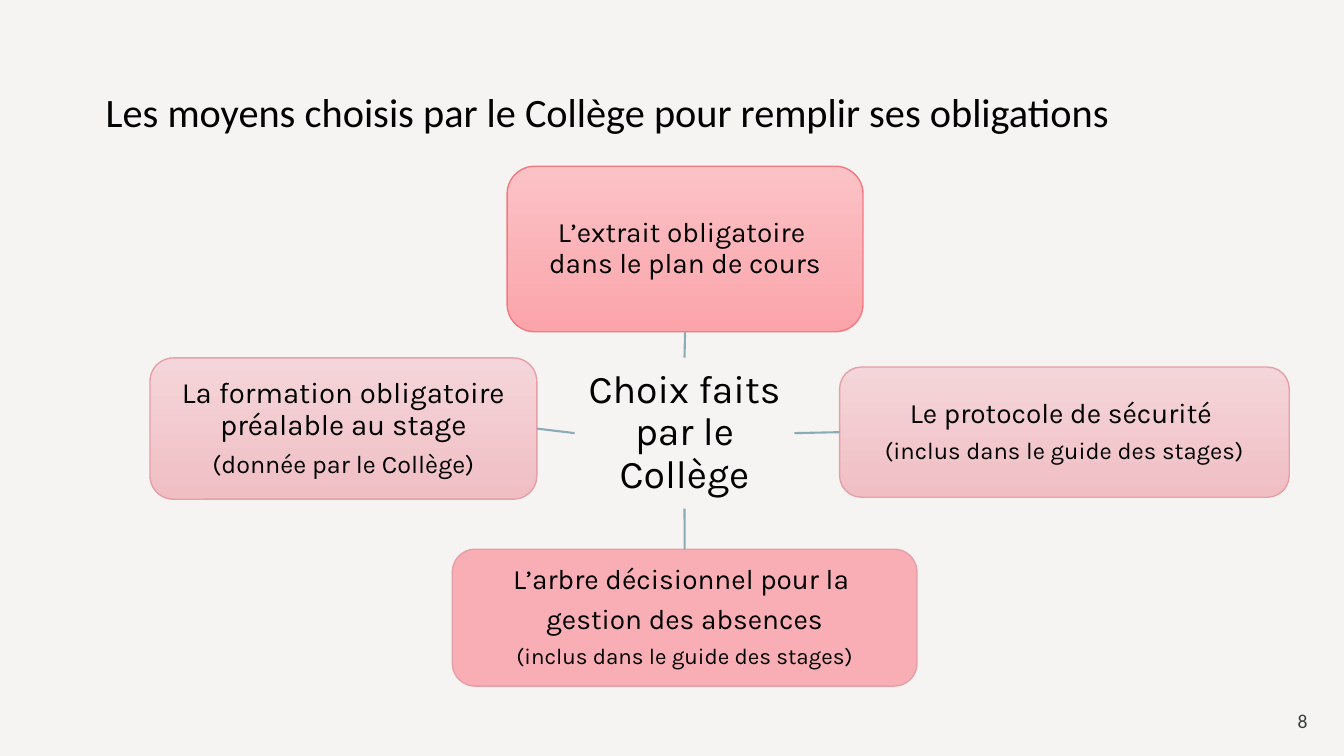
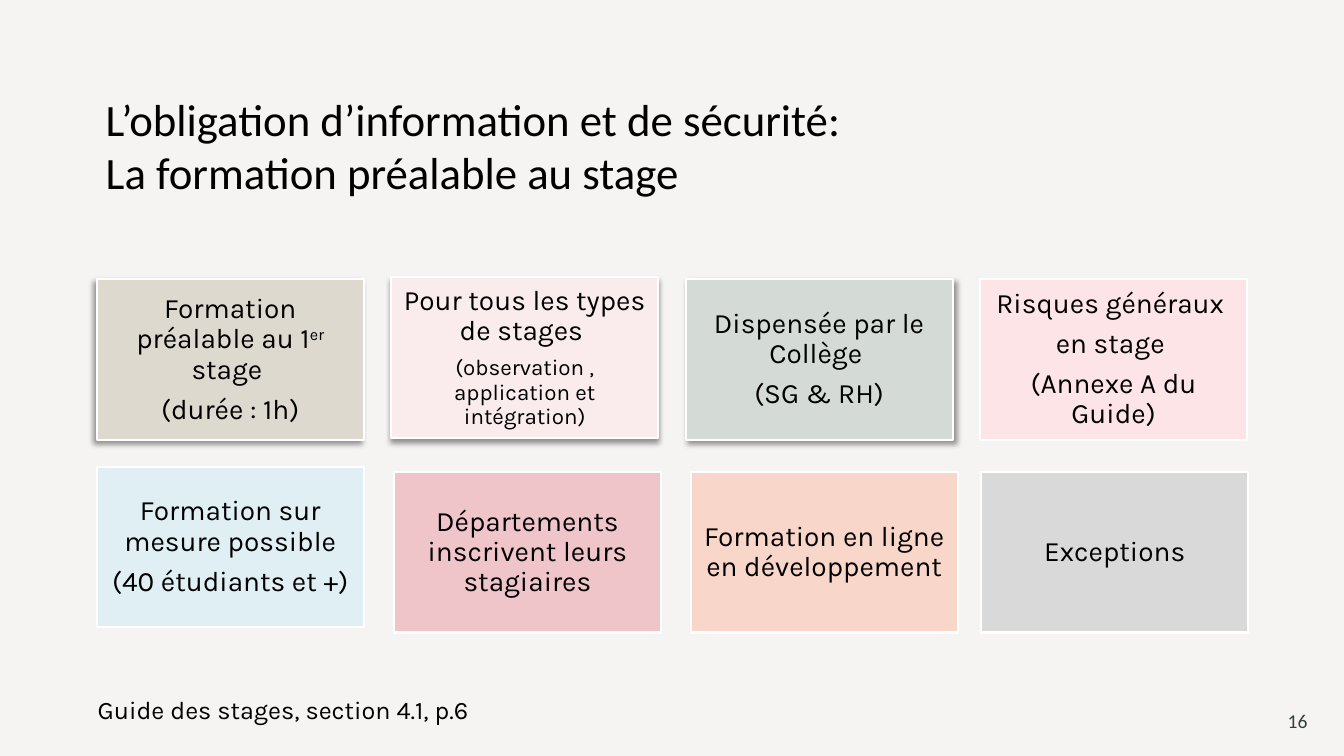
from lxml import etree
from pptx import Presentation
from pptx.dml.color import RGBColor
from pptx.enum import shapes, text
from pptx.oxml import ns
from pptx.util import Cm, Pt

# Shared style
BACKDROP = RGBColor(0xF6, 0xF4, 0xF2)
BLACK = RGBColor(0, 0, 0)
WHITE = RGBColor(0xFF, 0xFF, 0xFF)
NUMBER_GREEN = RGBColor(0x35, 0x40, 0x3A)
LINK_BLUE = RGBColor(0x8B, 0xAC, 0xB7)
CORAL = RGBColor(0xF4, 0x78, 0x82)
ROSE = RGBColor(0xE5, 0x9F, 0xA7)
PINK = RGBColor(0xF8, 0xAE, 0xB4)
BRIGHT_FADE = (RGBColor(0xFB, 0xC2, 0xC6), RGBColor(0xFB, 0xA5, 0xAB))
SOFT_FADE = (RGBColor(0xF4, 0xD5, 0xD9), RGBColor(0xF0, 0xBF, 0xC4))
SAND = RGBColor(0xDD, 0xD9, 0xCF)
BLUSH = RGBColor(0xFA, 0xEC, 0xED)
SAGE = RGBColor(0xD4, 0xDB, 0xD7)
PALE_PINK = RGBColor(0xFD, 0xE4, 0xE6)
SKY = RGBColor(0xDF, 0xEF, 0xF4)
DUSTY_PINK = RGBColor(0xEF, 0xC5, 0xCA)
PEACH = RGBColor(0xF8, 0xD6, 0xC9)
GREY = RGBColor(0xD9, 0xD9, 0xD9)
TITLE_FONT, BODY_FONT = "Calibri", "Karla"
ROUND = shapes.MSO_SHAPE.ROUNDED_RECTANGLE
ALTERNATE = shapes.MSO_SHAPE.FLOWCHART_ALTERNATE_PROCESS
LEFT, CENTER, RIGHT = text.PP_ALIGN.LEFT, text.PP_ALIGN.CENTER, text.PP_ALIGN.RIGHT
MIDDLE, BOTTOM = text.MSO_ANCHOR.MIDDLE, text.MSO_ANCHOR.BOTTOM
SPACING = 0.35  # space after a paragraph, as a share of its text size

# Content: lengths in cm; a paragraph is (text, size), and in a tuple of
# runs every second run is raised
MEANS_TITLE = ["Les moyens choisis par le Collège pour remplir ses obligations"]
CHOICE = [("Choix faits par le Collège", 28)]
CHOICE_BOX = (14.66, 9.19, 5.18, 3.45)
LINK_GAP = 0.18
# preset, box, fill, outline, spacing, link site, (x, y) side of the centre, paragraphs
MEANS = [
    (ALTERNATE, (12.78, 4.19, 8.97, 4.17), BRIGHT_FADE, CORAL, 0, 2, (0, -1),
     [("L’extrait obligatoire ", 20), ("dans le plan de cours", 20)]),
    (ALTERNATE, (21.16, 9.25, 11.33, 3.28), SOFT_FADE, ROSE, SPACING, 1, (1, 0),
     [("Le protocole de sécurité ", 20), ("(inclus dans le guide des stages)", 17)]),
    (ROUND, (11.4, 13.84, 11.71, 3.45), PINK, ROSE, SPACING, 0, (0, 1),
     [("L’arbre décisionnel pour la ", 20), ("gestion des absences", 20),
      ("(inclus dans le guide des stages)", 16)]),
    (ROUND, (3.78, 9.02, 9.75, 3.56), SOFT_FADE, ROSE, SPACING, 3, (-1, 0),
     [("La formation obligatoire préalable au stage", 21),
      ("(donnée par le Collège)", 18)]),
]

TRAINING_TITLE = ["L’obligation d’information et de sécurité:",
                  "La formation préalable au stage"]
# fill, shadow angle, (x, y) shift from the grid, paragraphs
CARDS = [
    (SAND, 135, (0, 0), [(("Formation préalable au 1", "er", " stage "), 20),
                         ("(durée : 1h)", 20)]),
    (BLUSH, 90, (0, -0.05), [("Pour tous les types de stages ", 20),
                             ("(observation , application et intégration)", 16)]),
    (SAGE, 45, (0, 0), [("Dispensée par le Collège ", 20), ("(SG & RH)", 20)]),
    (PALE_PINK, None, (0, 0), [("Risques généraux ", 20), ("en stage ", 20),
                               ("(Annexe A du Guide)", 20)]),
    (SKY, None, (0, -0.13), [("Formation sur mesure possible", 20),
                             ("(40 étudiants et +)", 20)]),
    (DUSTY_PINK, None, (0.07, 0), [("Départements inscrivent leurs stagiaires", 20)]),
    (PEACH, None, (0.13, 0), [("Formation en ligne en développement", 20)]),
    (GREY, None, (0.03, 0), [("Exceptions", 20)]),
]
COLUMNS = 4
CARD_W, CARD_H = 6.73, 4.05
GRID_X, GRID_Y, STEP_X, STEP_Y = 2.44, 7.04, 7.42, 4.85
REFERENCE = [("Guide des stages, section 4.1, p.6", 18)]


def cm(*lengths):
    return [Cm(length) for length in lengths]


def add_run(paragraph, words, size, font=BODY_FONT, colour=BLACK):
    run = paragraph.add_run()
    run.text = words
    run.font.size, run.font.name = Pt(size), font
    run.font.color.rgb = colour
    return run


def write(shape, paragraphs, margin, spacing=SPACING, align=CENTER):
    frame = shape.text_frame
    frame.word_wrap = True
    frame.vertical_anchor = MIDDLE
    frame.margin_left = frame.margin_right = Cm(margin)
    frame.margin_top = frame.margin_bottom = Cm(margin)
    for i, (words, size) in enumerate(paragraphs):
        paragraph = frame.add_paragraph() if i else frame.paragraphs[0]
        paragraph.alignment, paragraph.line_spacing = align, 0.9
        paragraph.space_after = Pt(spacing * size)
        runs = (words,) if isinstance(words, str) else words
        for j, part in enumerate(runs):
            run = add_run(paragraph, part, size)
            if j % 2:
                run._r.get_or_add_rPr().set("baseline", "30000")


def add_box(slide, preset, place, fill, outline, width):
    box = slide.shapes.add_shape(preset, *cm(*place))
    box.shadow.inherit = False
    if isinstance(fill, RGBColor):
        box.fill.solid()
        box.fill.fore_color.rgb = fill
    else:
        box.fill.gradient()
        box.fill.gradient_angle = 270
        for stop, colour in zip(box.fill.gradient_stops, fill):
            stop.color.rgb = colour
    box.line.color.rgb, box.line.width = outline, Pt(width)
    return box


def cast_shadow(box, angle):
    effects = box._element.spPr.find(ns.qn("a:effectLst"))
    shadow = etree.SubElement(effects, ns.qn("a:outerShdw"), blurRad=str(Pt(4)),
                              dist=str(Pt(3)), dir=str(angle * 60000), rotWithShape="0")
    colour = etree.SubElement(shadow, ns.qn("a:srgbClr"), val="000000")
    etree.SubElement(colour, ns.qn("a:alpha"), val="40000")


def add_link(slide, box, site, side):
    x, y, w, h = CHOICE_BOX
    end = cm(x + w / 2 + side[0] * (w / 2 + LINK_GAP),
             y + h / 2 + side[1] * (h / 2 + LINK_GAP))
    link = slide.shapes.add_connector(shapes.MSO_CONNECTOR.STRAIGHT, *end, *end)
    link.begin_connect(box, site)
    link.line.color.rgb, link.line.width = LINK_BLUE, Pt(1.5)
    etree.SubElement(link._element.spPr, ns.qn("a:effectLst"))


def new_slide(prs, title_lines, size, title_height, number):
    slide = prs.slides.add_slide(prs.slide_layouts[5])
    title = slide.shapes.title
    title.left, title.top, title.width, title.height = cm(2.41, 1.63, 29.03, title_height)
    frame = title.text_frame
    frame.auto_size = text.MSO_AUTO_SIZE.NONE
    frame.vertical_anchor = BOTTOM
    heading = frame.paragraphs[0]
    heading.alignment = LEFT
    for i, line in enumerate(title_lines):
        if i:
            heading.add_line_break()
        add_run(heading, line, size, TITLE_FONT)
    # Page number
    page = slide.shapes.add_textbox(*cm(31.75, 17.65, 1.45, 1.02)).text_frame
    page.word_wrap = True
    page.vertical_anchor = MIDDLE
    page.paragraphs[0].alignment = RIGHT
    add_run(page.paragraphs[0], str(number), 14, TITLE_FONT, NUMBER_GREEN)
    return slide


def means_slide(prs):
    slide = new_slide(prs, MEANS_TITLE, 28.8, 1.91, 8)
    write(slide.shapes.add_textbox(*cm(*CHOICE_BOX)), CHOICE, 0.05)
    for preset, place, fill, outline, spacing, site, side, paragraphs in MEANS:
        box = add_box(slide, preset, place, fill, outline, 1)
        write(box, paragraphs, 0.03, spacing)
        add_link(slide, box, site, side)


def training_slide(prs):
    slide = new_slide(prs, TRAINING_TITLE, 32, 3.51, 16)
    for i, (fill, angle, (dx, dy), paragraphs) in enumerate(CARDS):
        row, column = divmod(i, COLUMNS)
        place = (GRID_X + column * STEP_X + dx, GRID_Y + row * STEP_Y + dy, CARD_W, CARD_H)
        card = add_box(slide, shapes.MSO_SHAPE.RECTANGLE, place, fill, WHITE, 1.5)
        write(card, paragraphs, 0.2)
        if angle is not None:
            cast_shadow(card, angle)
    reference = slide.shapes.add_textbox(*cm(2.21, 17.42, 16.94, 1.02))
    write(reference, REFERENCE, 0.25, 0, LEFT)


def main():
    prs = Presentation()
    prs.slide_width, prs.slide_height = cm(33.87, 19.05)
    backdrop = prs.slide_master.background.fill
    backdrop.solid()
    backdrop.fore_color.rgb = BACKDROP
    means_slide(prs)
    training_slide(prs)
    prs.save("out.pptx")


if __name__ == "__main__":
    main()
